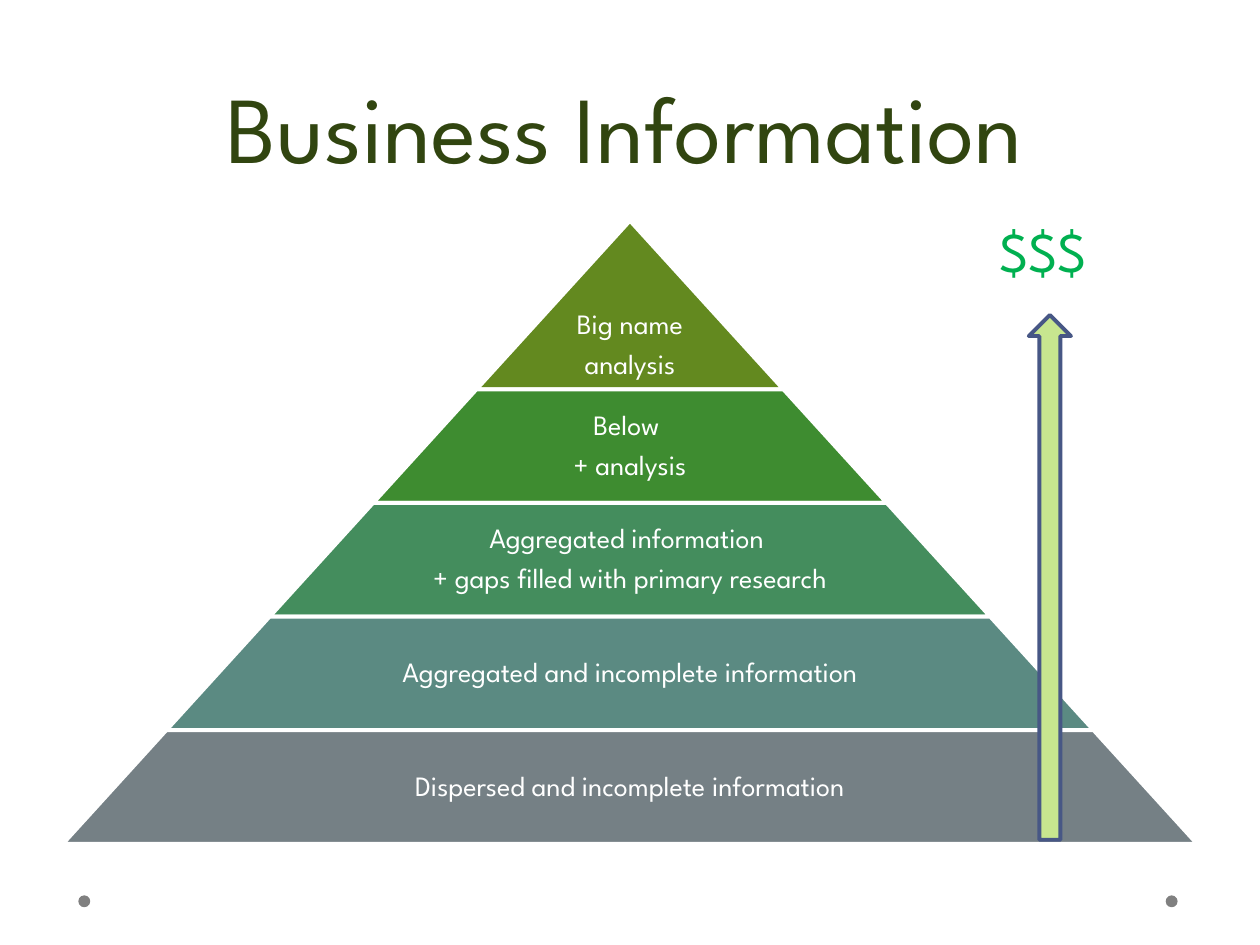
"""Build the Business Information pyramid slide."""
import pptx
import pptx.dml.color
import pptx.enum.shapes
import pptx.enum.text
import pptx.util
from pptx.util import Cm

FONT = "League Spartan"
SHAPES = pptx.enum.shapes.MSO_SHAPE
ALIGN = pptx.enum.text.PP_ALIGN
ANCHOR = pptx.enum.text.MSO_ANCHOR

LEVELS = [
    {"lines": ["Big name", "analysis"], "fill": "63891F", "height": 3.4,
     "text_share": 1, "anchor": ANCHOR.BOTTOM, "bottom_inset": 0.17},
    {"lines": ["Below ", "+ analysis"], "fill": "3E8C30"},
    {"lines": ["Aggregated information ", "+ gaps filled with primary research"], "fill": "448D5D"},
    {"lines": ["Aggregated and incomplete information"], "fill": "5B8A82"},
    {"lines": ["Dispersed and incomplete information"], "fill": "758085"},
]
LEVEL_DEFAULTS = {"height": 2.29, "text_share": 0.65, "anchor": ANCHOR.MIDDLE, "bottom_inset": 0.04}
CENTER, APEX, BASE_WIDTH = 12.7, 4.45, 22.86
DOT_LEFTS = [23.5, 1.58]
DOT_TOP, DOT_SIZE = 18.05, 0.24


def color(value):
    return pptx.dml.color.RGBColor.from_string(value)


def add_shape(slide, kind, box, fill, line=None):
    shape = slide.shapes.add_shape(kind, *map(Cm, box))
    shape.shadow.inherit = False
    shape.fill.solid()
    shape.fill.fore_color.rgb = color(fill)
    if line:
        shape.line.color.rgb = color(line)
        shape.line.width = pptx.util.Pt(2.25)
    else:
        shape.line.fill.background()
    return shape


def add_text(slide, box, lines, size, text_color, align=ALIGN.CENTER, anchor=ANCHOR.TOP,
             insets=(0.25, 0.13, 0.25, 0.13), spacing=None, after=0):
    frame = slide.shapes.add_textbox(*map(Cm, box)).text_frame
    frame.word_wrap = True
    frame.vertical_anchor = anchor
    frame.margin_left, frame.margin_top, frame.margin_right, frame.margin_bottom = map(Cm, insets)
    for index, line in enumerate(lines):
        paragraph = frame.add_paragraph() if index else frame.paragraphs[0]
        paragraph.alignment = align
        paragraph.line_spacing = spacing
        paragraph.space_after = pptx.util.Pt(after)
        run = paragraph.add_run()
        run.text = line
        run.font.name = FONT
        run.font.size = pptx.util.Pt(size)
        run.font.color.rgb = color(text_color)


def add_pyramid(slide):
    levels = [LEVEL_DEFAULTS | level for level in LEVELS]
    total = sum(level["height"] for level in levels)
    depth = 0
    for level in levels:
        height = level["height"]
        top = APEX + depth
        depth += height
        width = BASE_WIDTH * depth / total
        band = add_shape(slide, SHAPES.TRAPEZOID, (CENTER - width / 2, top, width, height),
                         level["fill"], "FFFFFF")
        band.adjustments[0] = BASE_WIDTH / 2 / total
        text_width = width * level["text_share"]
        add_text(slide, (CENTER - text_width / 2, top, text_width, height), level["lines"], 16,
                 "FFFFFF", anchor=level["anchor"],
                 insets=(0.04, 0.04, 0.04, level["bottom_inset"]), spacing=0.9, after=5.6)


def main():
    presentation = pptx.Presentation()
    presentation.slide_width, presentation.slide_height = Cm(25.4), Cm(19.05)
    slide = presentation.slides.add_slide(presentation.slide_layouts[6])
    for left in DOT_LEFTS:
        add_shape(slide, SHAPES.OVAL, (left, DOT_TOP, DOT_SIZE, DOT_SIZE), "808080")
    add_text(slide, (1.07, 0, 23.06, 3.81), ["Business Information"], 54, "314510",
             anchor=ANCHOR.BOTTOM, spacing=pptx.util.Pt(58))
    add_pyramid(slide)
    add_shape(slide, SHAPES.UP_ARROW, (20.74, 6.35, 0.85, 10.58), "C7E68F", "475785")
    add_text(slide, (19.89, 4.23, 2.54, 1.62), ["$$$"], 32, "00B050", align=ALIGN.LEFT)
    presentation.save("out.pptx")


if __name__ == "__main__":
    main()
